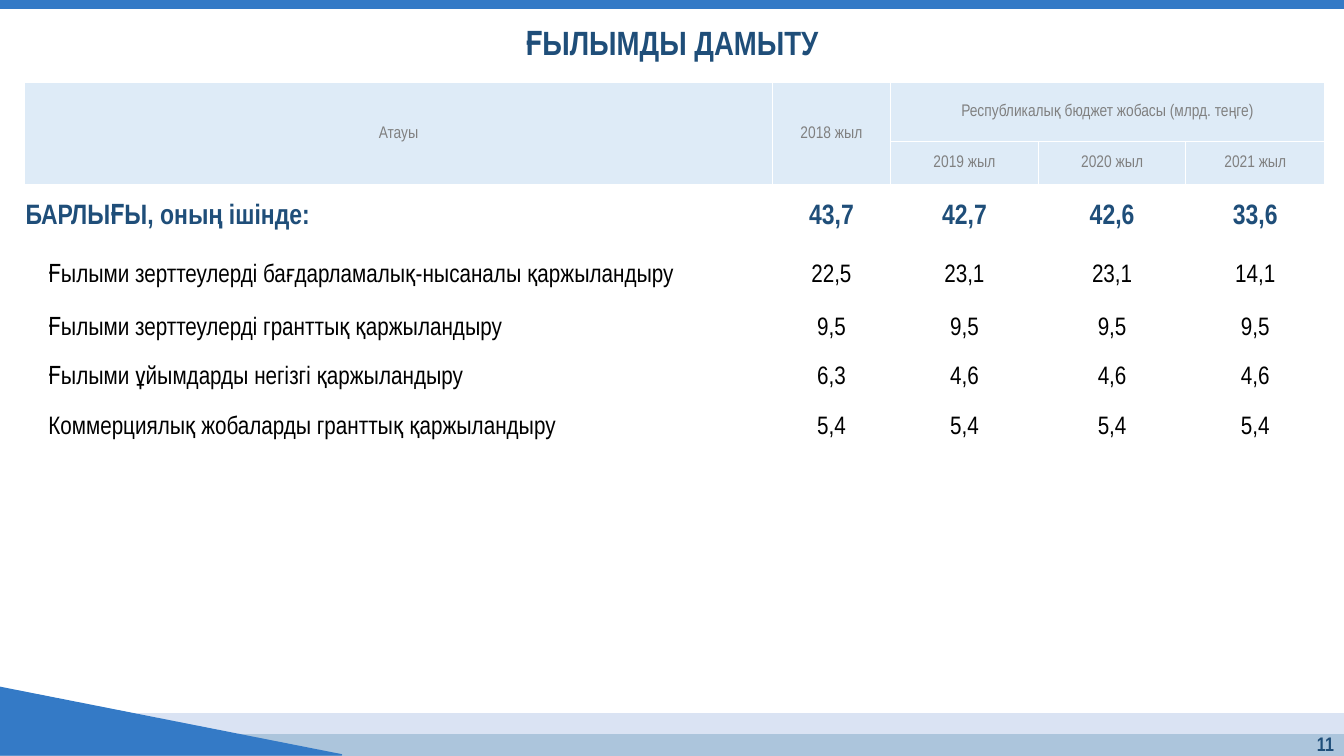
from lxml import etree
from pptx import Presentation
from pptx.dml.color import RGBColor
from pptx.enum import shapes, text
from pptx.oxml import ns
from pptx.util import Pt

FONT = "Arial Narrow"
NAVY = RGBColor(0x1F, 0x4E, 0x79)
BLUE = RGBColor(0x34, 0x7A, 0xC6)
STEEL = RGBColor(0xAC, 0xC5, 0xDC)
PALE = RGBColor(0xDA, 0xE3, 0xF3)
HEADER = RGBColor(0xDE, 0xEB, 0xF7)
GRAY = RGBColor(0x80, 0x80, 0x80)
BLACK = RGBColor(0, 0, 0)
WHITE = RGBColor(0xFF, 0xFF, 0xFF)

WIDTH, HEIGHT = 960, 540
COLUMNS = [534.2, 84.2, 105.8, 105.2, 99.4]
ROWS = [42.4, 31, 45.4, 39.6, 35.3, 35.3, 35.3]
HEADINGS = [
    (0, 0, 1, 0, "Атауы"),
    (0, 1, 1, 1, "2018 жыл"),
    (0, 2, 0, 4, "Республикалық бюджет жобасы (млрд. теңге)"),
    (1, 2, 1, 2, "2019 жыл"),
    (1, 3, 1, 3, "2020 жыл"),
    (1, 4, 1, 4, "2021 жыл"),
]
BUDGET = [
    ("БАРЛЫҒЫ, оның ішінде:", "43,7", "42,7", "42,6", "33,6"),
    ("Ғылыми зерттеулерді бағдарламалық-нысаналы қаржыландыру", "22,5", "23,1", "23,1", "14,1"),
    ("Ғылыми зерттеулерді гранттық қаржыландыру", "9,5", "9,5", "9,5", "9,5"),
    ("Ғылыми ұйымдарды негізгі қаржыландыру", "6,3", "4,6", "4,6", "4,6"),
    ("Коммерциялық жобаларды гранттық қаржыландыру", "5,4", "5,4", "5,4", "5,4"),
]


def write(tf, words, size, color, bold, align, spacing=None):
    p = tf.paragraphs[0]
    p.alignment = align
    if spacing:
        p.line_spacing = spacing
    r = p.add_run()
    r.text = words
    r.font.name = FONT
    r.font.size = Pt(size)
    r.font.bold = bold
    r.font.color.rgb = color


def add_block(s, kind, left, top, width, height, color):
    sp = s.shapes.add_shape(kind, Pt(left), Pt(top), Pt(width), Pt(height))
    sp.shadow.inherit = False
    sp.fill.solid()
    sp.fill.fore_color.rgb = color
    sp.line.color.rgb = color
    sp.line.width = Pt(1)


def add_bands(s, left, top, width, height):
    bottom = top + height
    rect = shapes.MSO_SHAPE.RECTANGLE
    add_block(s, rect, left, bottom - 16.5, width, 16.5, STEEL)
    add_block(s, rect, left, bottom - 30.5, width, 14.4, PALE)
    add_block(s, shapes.MSO_SHAPE.RIGHT_TRIANGLE, left, bottom - 49, 244, 48.2, BLUE)
    add_block(s, rect, left, top - 1.4, width, 7.2, BLUE)


def add_title(s, left, top, width, height):
    sp = s.shapes.title
    sp.left, sp.top, sp.width, sp.height = Pt(left), Pt(top), Pt(width), Pt(height)
    tf = sp.text_frame
    tf.vertical_anchor = text.MSO_ANCHOR.MIDDLE
    write(tf, "ҒЫЛЫМДЫ ДАМЫТУ", 24, NAVY, True, text.PP_ALIGN.CENTER, 0.9)


def add_page_number(s, left, top, width, height):
    sp = s.shapes.add_textbox(Pt(left), Pt(top), Pt(width), Pt(height))
    tf = sp.text_frame
    tf.word_wrap = True
    tf.vertical_anchor = text.MSO_ANCHOR.MIDDLE
    write(tf, "11", 14, NAVY, True, text.PP_ALIGN.RIGHT, 0.9)


def add_borders(cell):
    tc_pr = cell._tc.get_or_add_tcPr()
    for side in ("a:lnL", "a:lnR", "a:lnT", "a:lnB"):
        line = etree.SubElement(tc_pr, ns.qn(side), w=str(Pt(1)))
        fill = etree.SubElement(line, ns.qn("a:solidFill"))
        etree.SubElement(fill, ns.qn("a:srgbClr"), val=str(WHITE))


def format_cell(cell, indent=0.7):
    cell.vertical_anchor = text.MSO_ANCHOR.MIDDLE
    cell.margin_left = Pt(indent)
    cell.margin_right = cell.margin_top = Pt(0.7)
    cell.margin_bottom = 0


def add_budget_table(s, left, top, width, height):
    frame = s.shapes.add_table(len(ROWS), len(COLUMNS), Pt(left), Pt(top), Pt(width), Pt(height))
    table = frame.table
    table.first_row = table.horz_banding = False
    for column, size in zip(table.columns, COLUMNS):
        column.width = Pt(size)
    for row, size in zip(table.rows, ROWS):
        row.height = Pt(size)
    for i, row in enumerate(table.rows):
        for cell in row.cells:
            add_borders(cell)
            if i < 2:
                cell.fill.solid()
                cell.fill.fore_color.rgb = HEADER
            else:
                cell.fill.background()

    for row, col, last_row, last_col, words in HEADINGS:
        cell = table.cell(row, col)
        if (row, col) != (last_row, last_col):
            cell.merge(table.cell(last_row, last_col))
        format_cell(cell)
        write(cell.text_frame, words, 12, GRAY, False, text.PP_ALIGN.CENTER)

    for i, values in enumerate(BUDGET):
        total = i == 0
        size, color = (20, NAVY) if total else (18, BLACK)
        for j, words in enumerate(values):
            cell = table.cell(i + 2, j)
            format_cell(cell, 0.7 if total or j else 17)
            align = text.PP_ALIGN.CENTER if j else text.PP_ALIGN.LEFT
            write(cell.text_frame, words, size, color, total, align)


def main():
    prs = Presentation()
    prs.slide_width, prs.slide_height = Pt(WIDTH), Pt(HEIGHT)
    s = prs.slides.add_slide(prs.slide_layouts[5])
    add_bands(s, 0, 0, WIDTH, HEIGHT)
    add_title(s, 0, 8.6, WIDTH, 46)
    add_page_number(s, 908.4, 522.7, 51.6, 19.4)
    add_budget_table(s, 17.6, 58.5, sum(COLUMNS), sum(ROWS))
    prs.save("out.pptx")


if __name__ == "__main__":
    main()
